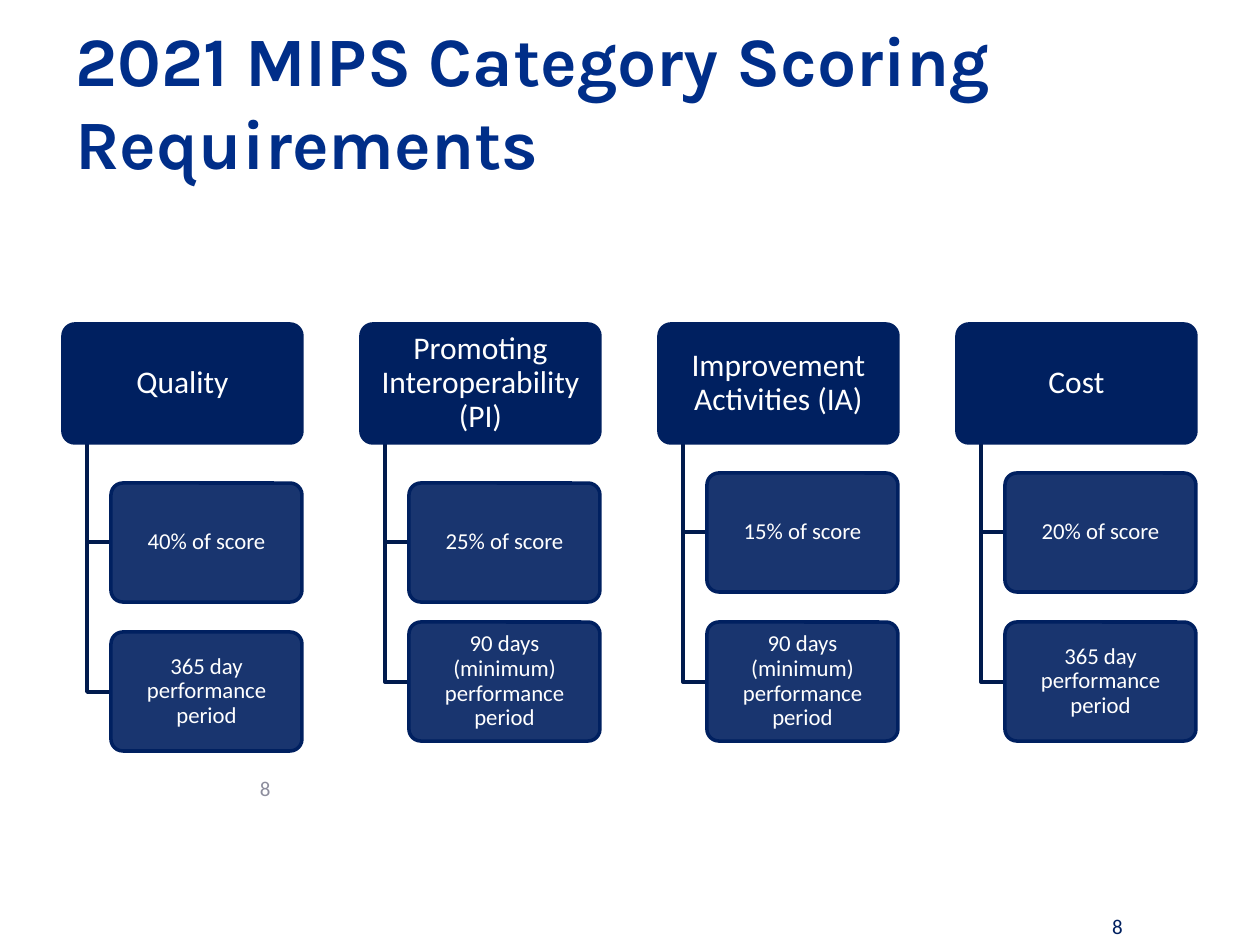
from lxml.etree import SubElement
from pptx import Presentation
from pptx.dml.color import RGBColor
from pptx.enum.shapes import MSO_SHAPE
from pptx.enum.text import MSO_ANCHOR, PP_ALIGN
from pptx.oxml.ns import qn
from pptx.util import Pt

SCALE = 914400 / 126
NAVY = RGBColor(0x00, 0x20, 0x60)
DEEP = RGBColor(0x00, 0x1A, 0x4D)
BLUE = RGBColor(0x00, 0x2E, 0x89)
GRAY = RGBColor(0x8C, 0x8D, 0x9D)
WHITE = RGBColor(0xFF, 0xFF, 0xFF)


def px(*sizes):
    return [round(size * SCALE) for size in sizes]


def write(shape, text, size=12, color=WHITE, font="Calibri", bold=False,
          align=PP_ALIGN.CENTER, inset=None, space=None):
    frame = shape.text_frame
    frame.word_wrap = True
    frame.vertical_anchor = MSO_ANCHOR.MIDDLE
    if inset is not None:
        frame.margin_left, frame.margin_right = px(inset, inset)
        frame.margin_top, frame.margin_bottom = px(inset, inset)
    para = frame.paragraphs[0]
    para.alignment = align
    para.line_spacing = space
    run = para.add_run()
    run.text = text
    run.font.size = Pt(size)
    run.font.name = font
    run.font.bold = bold
    run.font.color.rgb = color


deck = Presentation()
deck.slide_width, deck.slide_height = px(1260, 945)
slide = deck.slides.add_slide(deck.slide_layouts[6])
shapes = slide.shapes

write(shapes.add_textbox(*px(1081, 907, 73, 38)), "8", color=NAVY)
write(shapes.add_textbox(*px(63, 21, 1134, 158)),
      "2021 MIPS Category Scoring Requirements", size=39.6, color=BLUE,
      font="Karla", bold=True, align=PP_ALIGN.LEFT)

YEAR = "365 day performance period"
SHORT = "90 days (minimum) performance period"
GROUPS = [
    ("Quality", [(483, "40% of score"), (632, YEAR)]),
    ("Promoting Interoperability (PI)", [(483, "25% of score"), (622, SHORT)]),
    ("Improvement Activities (IA)", [(473, "15% of score"), (622, SHORT)]),
    ("Cost", [(473, "20% of score"), (622, YEAR)]),
]
TOP, HIGH = 324, 119
WIDE, STEP = 239, 298

for col, (name, notes) in enumerate(GROUPS):
    left = 63 + col * STEP
    trunk, inner = left + 24, left + 48
    cards = [(left, TOP, WIDE, name, 18, 8)]
    for top, note in notes:
        cards.append((inner, top, WIDE - 48, note, 13, 6))
        mid = top + HIGH / 2
        pen = shapes.build_freeform(trunk, TOP + HIGH, scale=SCALE)
        pen.add_line_segments([(trunk, mid), (inner, mid)], close=False)
        branch = pen.convert_to_shape()
        branch.shadow.inherit = False
        branch.fill.background()
        branch.line.color.rgb = DEEP
        branch.line.width = Pt(2)
    for x, y, wide, text, size, inset in cards:
        card = shapes.add_shape(MSO_SHAPE.ROUNDED_RECTANGLE, *px(x, y, wide, HIGH))
        card.adjustments[0] = 0.1
        card.shadow.inherit = False
        card.fill.solid()
        card.fill.fore_color.rgb = NAVY
        card.line.color.rgb = NAVY
        card.line.width = Pt(2)
        if x == inner:
            tint = card.fill._xPr.find(qn("a:solidFill"))[0]
            SubElement(tint, qn("a:alpha"), val="90000")
        write(card, text, size=size, inset=inset, space=0.9)

write(shapes.add_textbox(*px(0, 769, 283, 38)), "8", color=GRAY, align=PP_ALIGN.RIGHT)

deck.save("out.pptx")
